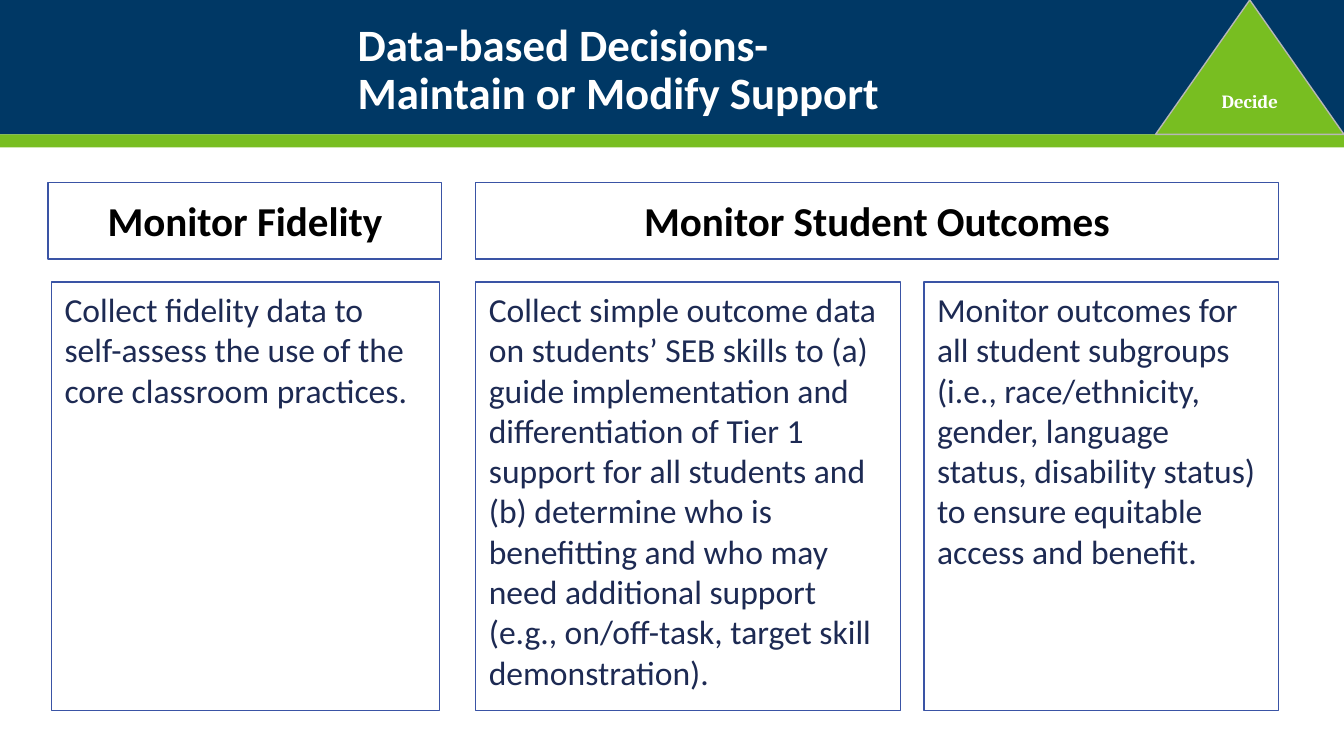
from dataclasses import dataclass

from pptx import Presentation
from pptx.dml.color import RGBColor
from pptx.enum.shapes import MSO_SHAPE as Preset
from pptx.enum.text import MSO_ANCHOR as Anchor, MSO_AUTO_SIZE as AutoSize, PP_ALIGN as Align
from pptx.util import Cm, Pt


@dataclass(frozen=True)
class Theme:
    navy: str = "003865"
    green: str = "78BE21"
    outline: str = "3A54A5"
    grey: str = "B7B7B7"
    ink: str = "1D2A53"
    black: str = "000000"
    white: str = "FFFFFF"
    sans: str = "Calibri"
    serif: str = "Cambria"
    title_size: int = 24
    heading_size: int = 22
    body_size: int = 18
    badge_size: int = 10
    line_width: float = 0.75


THEME = Theme()
SLIDE_WIDTH, SLIDE_HEIGHT = 25.4, 14.29
BAND_HEIGHT, STRIPE_HEIGHT = 2.54, 0.25
HEADING_TOP, HEADING_HEIGHT = 3.45, 1.45
BODY_TOP, BODY_HEIGHT = 5.33, 8.1

TITLE_LINES = ["Data-based Decisions-", "Maintain or Modify Support"]
# Each entry: left, width, text
HEADINGS = [
    (0.91, 7.44, "Monitor Fidelity"),
    (8.99, 15.17, "Monitor Student Outcomes"),
]
BODIES = [
    (0.97, 7.34, "Collect fidelity data to self-assess the use of the core classroom practices."),
    (8.99, 8.03, "Collect simple outcome data on students’ SEB skills to (a) guide implementation "
                 "and differentiation of Tier 1 support for all students and (b) determine who is "
                 "benefitting and who may need additional support (e.g., on/off-task, target skill "
                 "demonstration)."),
    (17.46, 6.7, "Monitor outcomes for all student subgroups (i.e., race/ethnicity, gender, language "
                 "status, disability status) to ensure equitable access and benefit."),
]


def set_values(target, values):
    for name, value in values.items():
        setattr(target, name, value)


def add_box(slide, preset, box, fill=None, line=None):
    shape = slide.shapes.add_shape(preset, *map(Cm, box))
    shape.shadow.inherit = False
    if fill:
        shape.fill.solid()
        shape.fill.fore_color.rgb = RGBColor.from_string(fill)
    else:
        shape.fill.background()
    if line:
        shape.line.color.rgb = RGBColor.from_string(line)
        shape.line.width = Pt(THEME.line_width)
    else:
        shape.line.fill.background()
    return shape


def write_text(shape, lines, size, color, margins, font=THEME.sans, bold=False,
               align=Align.LEFT, anchor=Anchor.TOP, fit=AutoSize.NONE, spacing=1.0):
    """Fill a shape with one paragraph per line; margins are (sides, top and bottom)."""
    side, edge = map(Cm, margins)
    frame = shape.text_frame
    frame.text = "\n".join(lines)
    set_values(frame, {
        "word_wrap": True, "auto_size": fit, "vertical_anchor": anchor,
        "margin_left": side, "margin_right": side, "margin_top": edge, "margin_bottom": edge,
    })
    for paragraph in frame.paragraphs:
        set_values(paragraph, {"alignment": align, "line_spacing": spacing, "space_before": Pt(0)})
        for run in paragraph.runs:
            set_values(run.font, {"name": font, "size": Pt(size), "bold": bold})
            run.font.color.rgb = RGBColor.from_string(color)


def add_title(slide):
    title = slide.shapes.title
    set_values(title, {"left": Cm(6.58), "top": Cm(0.69), "width": Cm(19.05), "height": Cm(1.3)})
    write_text(title, TITLE_LINES, THEME.title_size, THEME.white, (0.18, 0.1),
               bold=True, anchor=Anchor.MIDDLE, spacing=0.9)
    title.element.getparent().append(title.element)  # bring in front of the band


def add_heading(slide, left, width, text):
    box = (left, HEADING_TOP, width, HEADING_HEIGHT)
    shape = add_box(slide, Preset.RECTANGLE, box, line=THEME.outline)
    write_text(shape, [text], THEME.heading_size, THEME.black, (0.25, 0.25),
               bold=True, align=Align.CENTER, fit=AutoSize.SHAPE_TO_FIT_TEXT)


def add_body(slide, left, width, text):
    box = (left, BODY_TOP, width, BODY_HEIGHT)
    shape = add_box(slide, Preset.RECTANGLE, box, line=THEME.outline)
    write_text(shape, [text], THEME.body_size, THEME.ink, (0.25, 0.13))


def add_badge(slide, text):
    width = 3.56
    box = (SLIDE_WIDTH - width, 0, width, BAND_HEIGHT)
    shape = add_box(slide, Preset.ISOSCELES_TRIANGLE, box, fill=THEME.green, line=THEME.grey)
    write_text(shape, [text], THEME.badge_size, THEME.white, (0.25, 0.25), font=THEME.serif,
               bold=True, align=Align.CENTER, anchor=Anchor.MIDDLE)


def main():
    presentation = Presentation()
    set_values(presentation, {"slide_width": Cm(SLIDE_WIDTH), "slide_height": Cm(SLIDE_HEIGHT)})
    title_only = presentation.slide_layouts.get_by_name("Title Only")
    slide = presentation.slides.add_slide(title_only)

    add_box(slide, Preset.RECTANGLE, (0, 0, SLIDE_WIDTH, BAND_HEIGHT), fill=THEME.navy)
    add_box(slide, Preset.RECTANGLE, (0, BAND_HEIGHT, SLIDE_WIDTH, STRIPE_HEIGHT), fill=THEME.green)
    add_title(slide)
    for heading in HEADINGS:
        add_heading(slide, *heading)
    for body in BODIES:
        add_body(slide, *body)
    add_badge(slide, "Decide")

    presentation.save("out.pptx")


if __name__ == "__main__":
    main()
